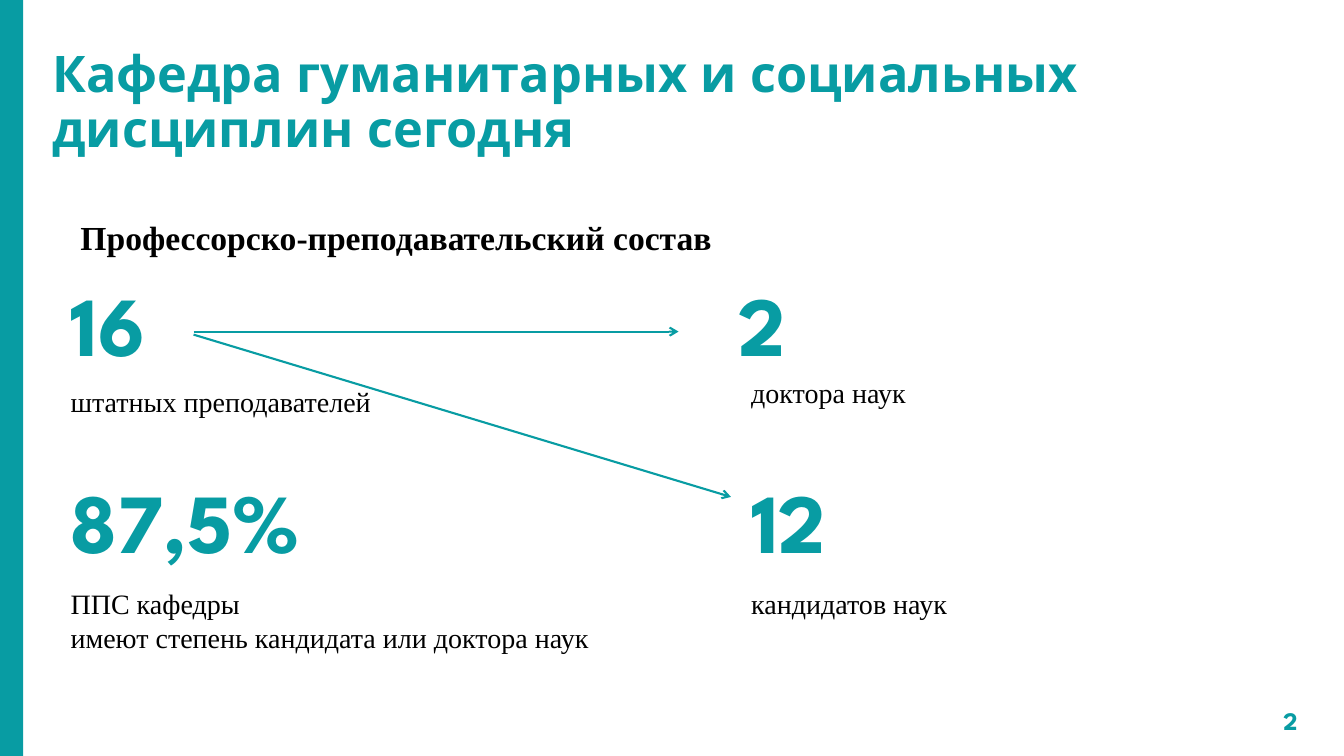
"""Build the slide about the teaching staff of the department."""
from dataclasses import dataclass

from lxml.etree import SubElement
from pptx import Presentation
from pptx.dml.color import RGBColor
from pptx.enum.shapes import MSO_CONNECTOR, MSO_SHAPE
from pptx.enum.text import MSO_ANCHOR, PP_ALIGN
from pptx.oxml.ns import qn
from pptx.slide import Slide
from pptx.util import Inches, Pt

TEAL = RGBColor(0x08, 0x9C, 0xA3)
BLACK = RGBColor(0, 0, 0)
WHITE = RGBColor(0xFF, 0xFF, 0xFF)
DISPLAY_FONT = "League Spartan"
BODY_FONT = "Times New Roman"


@dataclass(frozen=True)
class Style:
    font: str
    size: float
    color: RGBColor
    bold: bool = True
    line_spacing: float = 1.0
    left_inset: float = 0.0


@dataclass(frozen=True)
class Label:
    text: str
    left: float
    top: float
    width: float
    height: float
    style: Style
    align: PP_ALIGN = PP_ALIGN.LEFT
    anchor: MSO_ANCHOR = MSO_ANCHOR.TOP
    fill: RGBColor | None = None


@dataclass(frozen=True)
class Arrow:
    start: tuple[float, float]
    end: tuple[float, float]


TITLE = Style(DISPLAY_FONT, 36, TEAL, line_spacing=0.9)
FIGURE = Style(DISPLAY_FONT, 60, TEAL, line_spacing=0.9)
PAGE_NUMBER = Style(DISPLAY_FONT, 18, TEAL, left_inset=0.1)
HEADING = Style(BODY_FONT, 24, BLACK, left_inset=0.1)
CAPTION = Style(BODY_FONT, 20, BLACK, bold=False)

STAFF_LEFT, DEGREE_LEFT = 0.7, 7.45
UPPER_TOP, LOWER_TOP = 2.77, 4.72
FIGURE_HEIGHT = 1.05

LABELS = [
    Label("Кафедра гуманитарных и социальных дисциплин сегодня",
          0.52, 0.44, 12.29, 1.05, TITLE),
    Label("2", 9.97, 6.95, 3, 0.4, PAGE_NUMBER, PP_ALIGN.RIGHT, MSO_ANCHOR.MIDDLE),
    Label("Профессорско-преподавательский состав", STAFF_LEFT, 2.1, 8.1, 0.6, HEADING),
    Label("16", STAFF_LEFT, UPPER_TOP, 1.22, FIGURE_HEIGHT, FIGURE),
    Label("штатных преподавателей", STAFF_LEFT, 3.77, 3.72, 0.67, CAPTION),
    Label("87,5%", STAFF_LEFT, LOWER_TOP, 2.72, FIGURE_HEIGHT, FIGURE),
    Label("ППС кафедры\vимеют степень кандидата или доктора наук",
          STAFF_LEFT, 5.77, 5.34, 0.94, CAPTION),
    Label("12", DEGREE_LEFT, LOWER_TOP, 1.52, FIGURE_HEIGHT, FIGURE),
    Label("кандидатов наук", DEGREE_LEFT, 5.77, 2.51, 0.67, CAPTION),
    Label("2 ", 6.73, UPPER_TOP, 1.39, FIGURE_HEIGHT, FIGURE, PP_ALIGN.RIGHT, fill=WHITE),
    Label("доктора наук", DEGREE_LEFT, 3.68, 2.16, 0.47, CAPTION),
]

ARROWS = [
    Arrow((1.92, 3.29), (6.73, 3.29)),
    Arrow((1.92, 3.32), (7.25, 4.93)),
]


def draw_side_band(slide: Slide) -> None:
    """Draw the full-height band on the left edge."""
    shape = slide.shapes.add_shape(MSO_SHAPE.RECTANGLE, 0, 0, Inches(0.23), Inches(7.5))
    shape.shadow.inherit = False
    shape.fill.solid()
    shape.fill.fore_color.rgb = TEAL
    shape.line.fill.background()


def draw_label(slide: Slide, label: Label) -> None:
    """Draw one styled text box."""
    shape = slide.shapes.add_textbox(
        Inches(label.left), Inches(label.top), Inches(label.width), Inches(label.height))
    if label.fill is not None:
        shape.fill.solid()
        shape.fill.fore_color.rgb = label.fill
    style = label.style
    text_frame = shape.text_frame
    text_frame.word_wrap = True
    text_frame.vertical_anchor = label.anchor
    text_frame.margin_left = Inches(style.left_inset)
    text_frame.text = label.text
    paragraph = text_frame.paragraphs[0]
    paragraph.alignment = label.align
    paragraph.line_spacing = style.line_spacing
    paragraph.font.name = style.font
    paragraph.font.size = Pt(style.size)
    paragraph.font.bold = style.bold
    paragraph.font.color.rgb = style.color


def draw_arrow(slide: Slide, arrow: Arrow) -> None:
    """Draw one straight line with an open arrowhead at its end."""
    connector = slide.shapes.add_connector(
        MSO_CONNECTOR.STRAIGHT,
        *(Inches(value) for value in (*arrow.start, *arrow.end)))
    connector.line.color.rgb = TEAL
    connector.line.width = Pt(1.5)
    properties = connector.element.spPr
    SubElement(properties.find(qn("a:ln")), qn("a:tailEnd"), type="arrow")
    SubElement(properties, qn("a:effectLst"))


def main() -> None:
    """Create the presentation and save it."""
    presentation = Presentation()
    presentation.slide_width = Inches(13.33)
    presentation.slide_height = Inches(7.5)
    slide = presentation.slides.add_slide(presentation.slide_layouts[6])
    draw_side_band(slide)
    for label in LABELS:
        draw_label(slide, label)
    for arrow in ARROWS:
        draw_arrow(slide, arrow)
    presentation.save("out.pptx")


if __name__ == "__main__":
    main()
